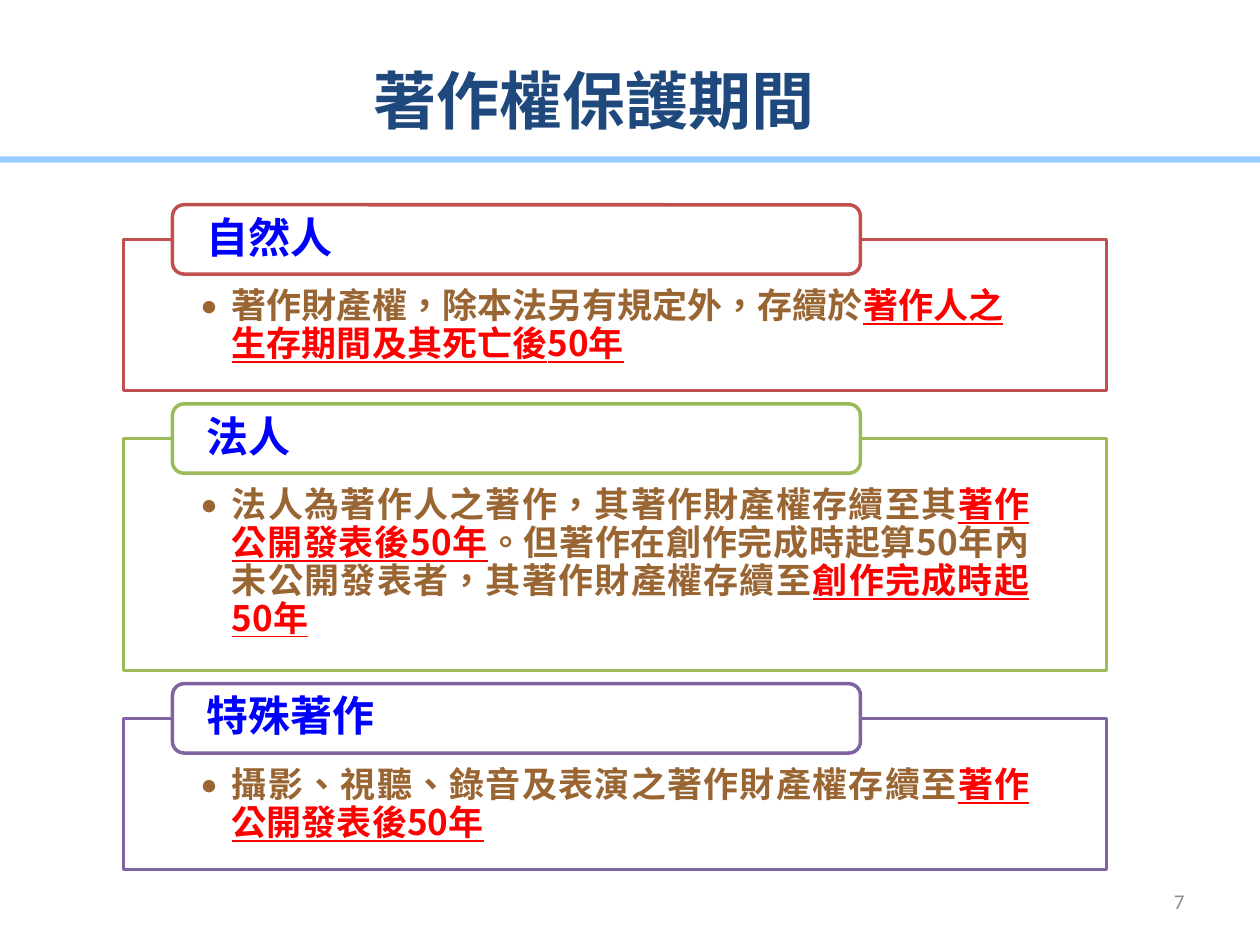
"""Slide on copyright protection periods: three labelled panels under a title."""
from lxml.etree import SubElement
from pptx import Presentation
from pptx.dml.color import RGBColor
from pptx.enum.shapes import MSO_SHAPE as Shape
from pptx.enum.text import MSO_ANCHOR as Anchor, PP_ALIGN as Align
from pptx.oxml.ns import qn
from pptx.util import Pt

COLORS = {"white": "FFFFFF", "rule": "99CCFF", "title": "1F497D", "number": "8C8C8C",
          "label": "0000FF", "body": "996633", "key": "FF0000",
          "red": "C0504D", "green": "9BBB59", "purple": "8064A2"}
CJK = "Noto Sans CJK SC"


def add_span(para, text, color, size, name=CJK, **formats):
    span = para.add_run()
    span.text = text
    for key, value in {"name": name, "size": Pt(size), **formats}.items():
        setattr(span.font, key, value)
    span.font.color.rgb = RGBColor.from_string(COLORS[color])
    props = span._r.get_or_add_rPr()
    props.set("lang", "zh-TW")
    SubElement(props, qn("a:ea")).set("typeface", name)


def add_box(place, kind=None, fill=None, line=None, margins=(7.2, 3.6, 7.2, 3.6),
            anchor=Anchor.TOP):
    place = [Pt(value) for value in place]
    if kind is None:
        box = page.shapes.add_textbox(*place)
    else:
        box = page.shapes.add_shape(kind, *place)
        box.shadow.inherit = False
        box.fill.solid()
        box.fill.fore_color.rgb = RGBColor.from_string(COLORS[fill])
        if line:
            box.line.color.rgb = RGBColor.from_string(COLORS[line])
            box.line.width = Pt(2)
        else:
            box.line.fill.background()
    frame = box.text_frame
    sides = ("margin_left", "margin_top", "margin_right", "margin_bottom")
    formats = dict(zip(sides, map(Pt, margins)), word_wrap=True, vertical_anchor=anchor)
    for key, value in formats.items():
        setattr(frame, key, value)
    para = frame.paragraphs[0]
    para.alignment = Align.LEFT
    return para


deck = Presentation()
deck.slide_width, deck.slide_height = Pt(720), Pt(540)
page = deck.slides.add_slide(deck.slide_layouts[6])

add_box((-2.9, 89.3, 724.3, 3.6), Shape.RECTANGLE, "rule")
title = add_box((206.6, 31.7, 489.6, 56.9))
add_span(title, "著作權保護期間", "title", 36, bold=True)
number = add_box((516.2, 500.4, 167.8, 28.8), anchor=Anchor.MIDDLE)
number.alignment = Align.RIGHT
add_span(number, "7", "number", 12, "Calibri")

panels = [
    ("自然人", "red", 86.4, Align.LEFT,
     ["著作財產權，除本法另有規定外，存續於", "著作人之生存期間及其死亡後50年"]),
    ("法人", "green", 132.5, Align.JUSTIFY,
     ["法人為著作人之著作，其著作財產權存續至其", "著作公開發表後50年",
      "。但著作在創作完成時起算50年內未公開發表者，其著作財產權存續至",
      "創作完成時起50年"]),
    ("特殊著作", "purple", 86.4, Align.JUSTIFY,
     ["攝影、視聽、錄音及表演之著作財產權存續至", "著作公開發表後50年"]),
]
top = 136.8
for label, color, height, alignment, pieces in panels:
    para = add_box((70.6, top, 561.6, height), Shape.RECTANGLE, "white", color,
                   (43.9, 28.1, 43.9, 11.5))
    para.alignment = alignment
    para.line_spacing = 0.9
    props = para._p.get_or_add_pPr()
    props.set("marL", str(Pt(18)))
    props.set("indent", str(Pt(-18)))
    bullet_color = SubElement(props, qn("a:buClr"))
    SubElement(bullet_color, qn("a:srgbClr")).set("val", COLORS["body"])
    SubElement(props, qn("a:buFont")).set("typeface", "Calibri")
    SubElement(props, qn("a:buChar")).set("char", "•")
    for index, piece in enumerate(pieces):
        marked = index % 2 == 1
        add_span(para, piece, "key" if marked else "body", 20, bold=True, underline=marked)

    heading = add_box((98.6, top - 19.8, 393.1, 39.6), Shape.ROUNDED_RECTANGLE,
                      "white", color, (17.3, 0, 17.3, 0), Anchor.MIDDLE)
    heading.line_spacing = 0.9
    add_span(heading, label, "label", 24, bold=True)
    top += height + 27.4

deck.save("out.pptx")
